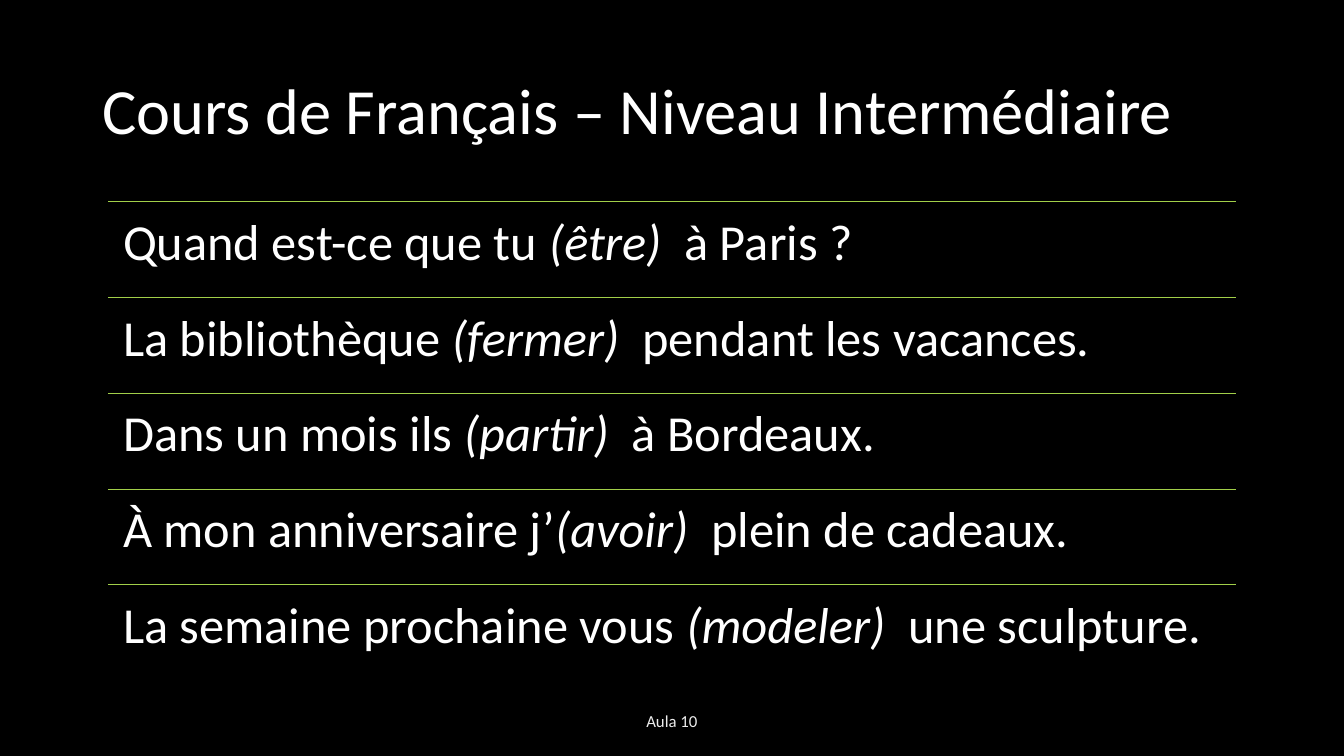
from lxml.etree import SubElement
from pptx import Presentation
from pptx.dml.color import RGBColor as RGB
from pptx.enum.shapes import MSO_CONNECTOR as Conn
from pptx.enum.text import MSO_ANCHOR as Anchor, PP_ALIGN as Align
from pptx.oxml.ns import qn
from pptx.util import Inches, Pt

HEX = {"back": "000000", "text": "FFFFFF", "foot": "EDEDED", "rule": "A2CF49"}
FONT = "Calibri"
WIDE, HIGH = 13.33, 7.5
ROW = 0.95

# Each phrase: start, verb in italics, end
ROWS = [
    ("Quand est-ce que tu ", "(être)", "  à Paris ?"),
    ("La bibliothèque ", "(fermer)", "  pendant les vacances."),
    ("Dans un mois ils ", "(partir)", "  à Bordeaux."),
    ("À mon anniversaire j’", "(avoir)", "  plein de cadeaux."),
    ("La semaine prochaine vous ", "(modeler)", "  une sculpture."),
]


def color(name):
    return RGB.from_string(HEX[name])


def add_text(slide, box, runs, size, ink="text", anchor=Anchor.MIDDLE, pad=None):
    """Place one paragraph of (text, italic) runs in the box."""
    frame = slide.shapes.add_textbox(*map(Inches, box)).text_frame
    frame.word_wrap = True
    frame.vertical_anchor = anchor
    if pad is not None:
        frame.margin_left = frame.margin_right = Inches(pad)
        frame.margin_top = frame.margin_bottom = Inches(pad)
    para = frame.paragraphs[0]
    for text, slant in runs:
        run = para.add_run()
        run.text = text
        font = run.font
        font.name, font.size, font.italic = FONT, Pt(size), slant
        font.color.rgb = color(ink)
    return para


def add_rule(slide, left, top, width):
    line = slide.shapes.add_connector(
        Conn.STRAIGHT, *map(Inches, (left, top, left + width, top)))
    line.line.color.rgb = color("rule")
    line.line.width = Pt(0.5)
    SubElement(line._element.spPr, qn("a:effectLst"))


def add_title(slide, box):
    para = add_text(slide, box, [("Cours de Français – Niveau Intermédiaire", False)], 46)
    para.line_spacing = 0.9


def add_list(slide, box):
    """Stack the phrases, each under its own rule."""
    left, top, width, height = box
    step = height / len(ROWS)
    for i, (start, verb, end) in enumerate(ROWS):
        y = top + i * step
        add_rule(slide, left, y, width)
        runs = [(start, False), (verb, True), (end, False)]
        para = add_text(slide, (left, y, width, step), runs, 36,
                        anchor=Anchor.TOP, pad=0.15)
        para.line_spacing = 0.9


def add_foot(slide, box):
    para = add_text(slide, box, [("Aula 10", False)], 12, "foot")
    para.alignment = Align.CENTER
    para.space_after = Pt(6)


def main():
    deck = Presentation()
    deck.slide_width, deck.slide_height = Inches(WIDE), Inches(HIGH)
    slide = deck.slides.add_slide(deck.slide_layouts[6])
    fill = slide.background.fill
    fill.solid()
    fill.fore_color.rgb = color("back")

    # Title, phrases and footer, each centred across the slide
    def band(top, width, height):
        return (WIDE - width) / 2, top, width, height

    add_title(slide, band(0.4, 11.5, 1.45))
    add_list(slide, band(2, 11.19, ROW * len(ROWS)))
    add_foot(slide, band(6.95, 4.5, 0.4))
    deck.save("out.pptx")


if __name__ == "__main__":
    main()
